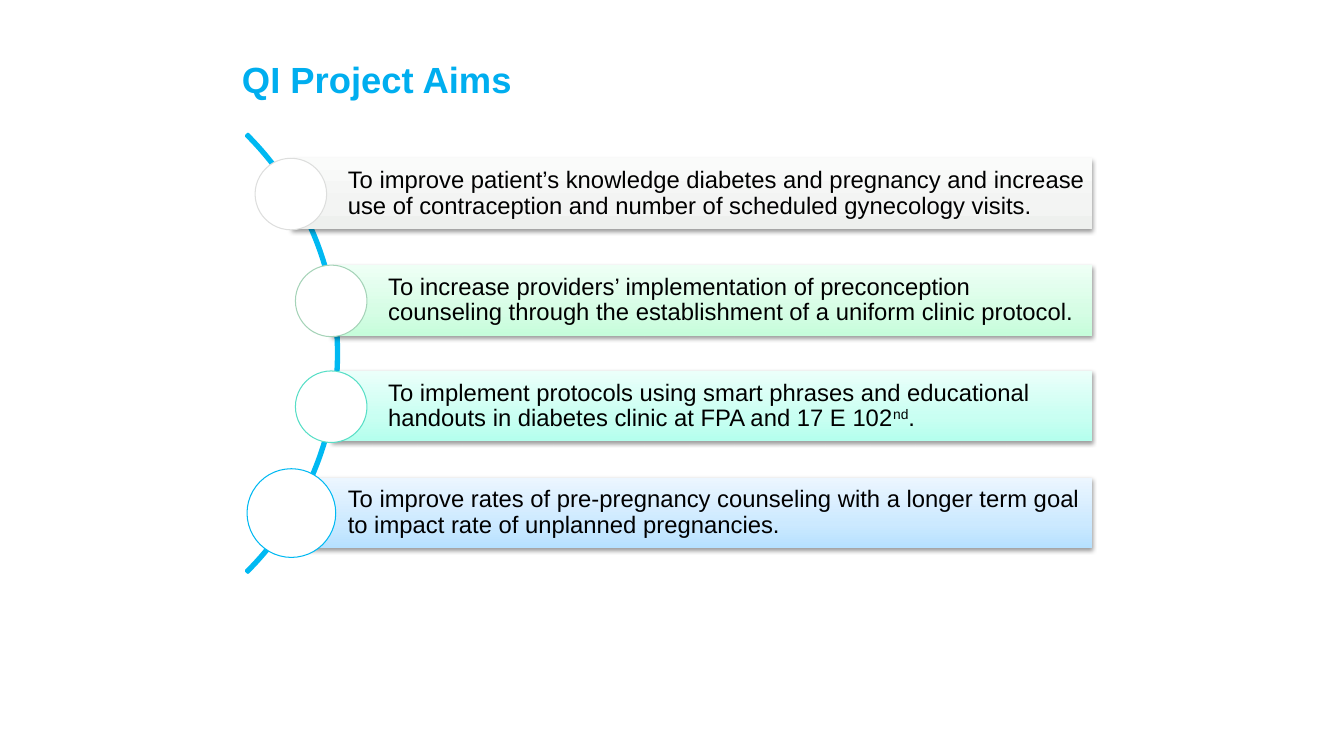
from copy import deepcopy

from lxml import etree
from pptx import Presentation
from pptx.dml.color import RGBColor
from pptx.enum import shapes, text
from pptx.oxml.ns import qn
from pptx.util import Pt

PX = 9144  # EMU per px, 100 px to the inch

WHITE = RGBColor(0xFF, 0xFF, 0xFF)
BLACK = RGBColor(0x00, 0x00, 0x00)
TITLE_BLUE = RGBColor(0x00, 0xAE, 0xEF)
ARC_BLUE = RGBColor(0x00, 0xB9, 0xF2)

BAR_RIGHT, BAR_HEIGHT = 1083, 70
FIRST_TOP, LAST_TOP = 157, 474

# text (superscript between carets), bar left, circle diameter, circle line, gradient
AIMS = [
    ("To improve patient’s knowledge diabetes and pregnancy and increase "
     "use of contraception and number of scheduled gynecology visits.",
     289, 71, RGBColor(0xDD, 0xDE, 0xDD), ("EEF0EE", "F3F4F3", "FAFBFA")),
    ("To increase providers’ implementation of preconception "
     "counseling through the establishment of a uniform clinic protocol.",
     329, 71, RGBColor(0xA5, 0xD3, 0xB8), ("C6FDDB", "D6FDE5", "EEFFF5")),
    ("To implement protocols using smart phrases and educational "
     "handouts in diabetes clinic at FPA and 17 E 102^nd^.",
     329, 71, RGBColor(0x57, 0xDE, 0xC6), ("B4FFED", "C9FFF2", "EBFFFA")),
    ("To improve rates of pre-pregnancy counseling with a longer term goal "
     "to impact rate of unplanned pregnancies.",
     289, 88, ARC_BLUE, ("B6E1FF", "CCE9FF", "ECF6FF")),
]


def write(frame, content, size, color, bold=False, spacing=None, insets=(10, 5, 10, 5)):
    """Fill the frame with one paragraph; text between carets is superscript."""
    frame.word_wrap = True
    frame.auto_size = text.MSO_AUTO_SIZE.NONE
    frame.vertical_anchor = text.MSO_ANCHOR.MIDDLE
    (frame.margin_left, frame.margin_top,
     frame.margin_right, frame.margin_bottom) = (inset * PX for inset in insets)
    paragraph = frame.paragraphs[0]
    paragraph.alignment = text.PP_ALIGN.LEFT
    paragraph.line_spacing = spacing
    for index, piece in enumerate(content.split("^")):
        run = paragraph.add_run()
        run.text = piece
        run.font.name = "Arial"
        run.font.size = Pt(size)
        run.font.bold = bold
        run.font.color.rgb = color
        if index % 2:
            run.font._element.set("baseline", "30000")


def add_shadow(shape):
    effects = shape._element.spPr.find(qn("a:effectLst"))
    shadow = etree.SubElement(effects, qn("a:outerShdw"), blurRad=str(Pt(3.1)),
                              dist=str(Pt(1.6)), dir="5400000", rotWithShape="0")
    color = etree.SubElement(shadow, qn("a:srgbClr"), val="000000")
    etree.SubElement(color, qn("a:alpha"), val="38000")


def fill_upward(shape, colors):
    """Three-stop gradient that runs from the bottom to the top."""
    fill = shape.fill
    fill.gradient()
    fill.gradient_angle = 90
    stop_list = shape._element.spPr.find(".//" + qn("a:gsLst"))
    stop_list.insert(1, deepcopy(stop_list[0]))
    for stop, position, color in zip(fill.gradient_stops, (0, 0.35, 1), colors):
        stop.position = position
        stop.color.rgb = RGBColor.from_string(color)


class AimsSlide:
    def __init__(self, presentation):
        self.slide = presentation.slides.add_slide(presentation.slide_layouts[5])

    def title(self, content, left, top, width, height):
        shape = self.slide.shapes.title
        shape.left, shape.top = left * PX, top * PX
        shape.width, shape.height = width * PX, height * PX
        write(shape.text_frame, content, 26, TITLE_BLUE, bold=True, insets=(10, 5, 10, 12))

    def shape(self, kind, left, top, width, height, line=None, line_width=0.75):
        shape = self.slide.shapes.add_shape(
            kind, left * PX, top * PX, width * PX, height * PX)
        shape.shadow.inherit = False
        if line is None:
            shape.line.fill.background()
        else:
            shape.line.color.rgb = line
            shape.line.width = Pt(line_width)
        return shape

    def arc(self, left, top, size):
        arc = self.shape(shapes.MSO_SHAPE.BLOCK_ARC, left, top, size, size, ARC_BLUE, 2)
        arc.fill.background()
        for index, value in enumerate((189, 27, 0.004)):
            arc.adjustments[index] = value

    def bar(self, content, left, top, colors):
        bar = self.shape(shapes.MSO_SHAPE.RECTANGLE, left, top, BAR_RIGHT - left, BAR_HEIGHT)
        fill_upward(bar, colors)
        add_shadow(bar)
        write(bar.text_frame, content, 17, BLACK, spacing=0.9, insets=(56, 5, 5, 5))

    def circle(self, center_x, center_y, diameter, line):
        circle = self.shape(shapes.MSO_SHAPE.OVAL, center_x - (diameter + 1) // 2,
                            center_y - diameter // 2, diameter, diameter, line)
        circle.fill.solid()
        circle.fill.fore_color.rgb = WHITE


def main():
    presentation = Presentation()
    presentation.slide_width, presentation.slide_height = 1333 * PX, 750 * PX
    slide = AimsSlide(presentation)
    slide.title("QI Project Aims", 230, 48, 900, 68)
    slide.arc(-279, 43, 615)
    pitch = (LAST_TOP - FIRST_TOP) / (len(AIMS) - 1)
    for row, (content, left, diameter, line, colors) in enumerate(AIMS):
        top = round(FIRST_TOP + row * pitch)
        slide.bar(content, left, top, colors)
        slide.circle(left, top + BAR_HEIGHT // 2, diameter, line)
    presentation.save("out.pptx")


if __name__ == "__main__":
    main()
